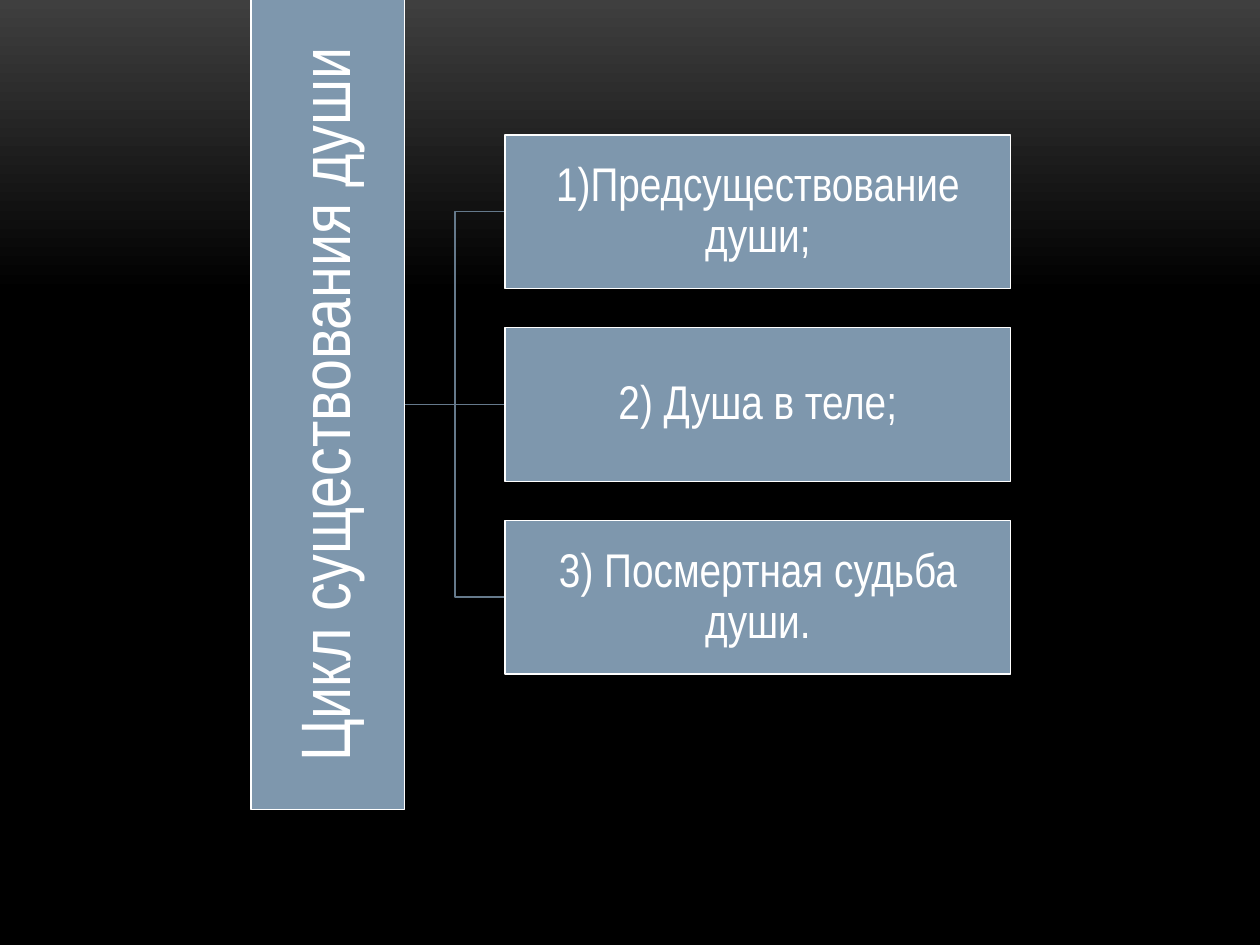
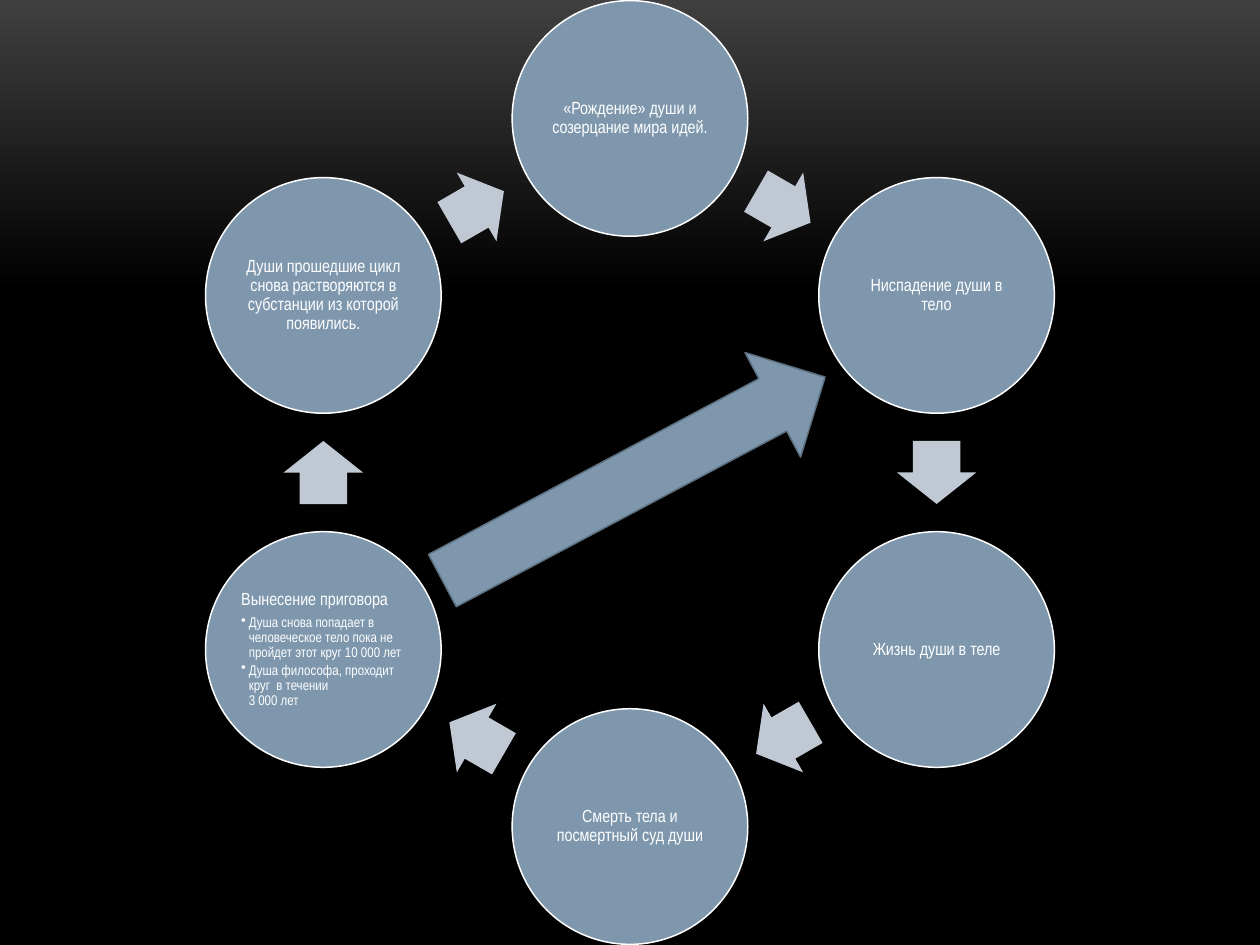
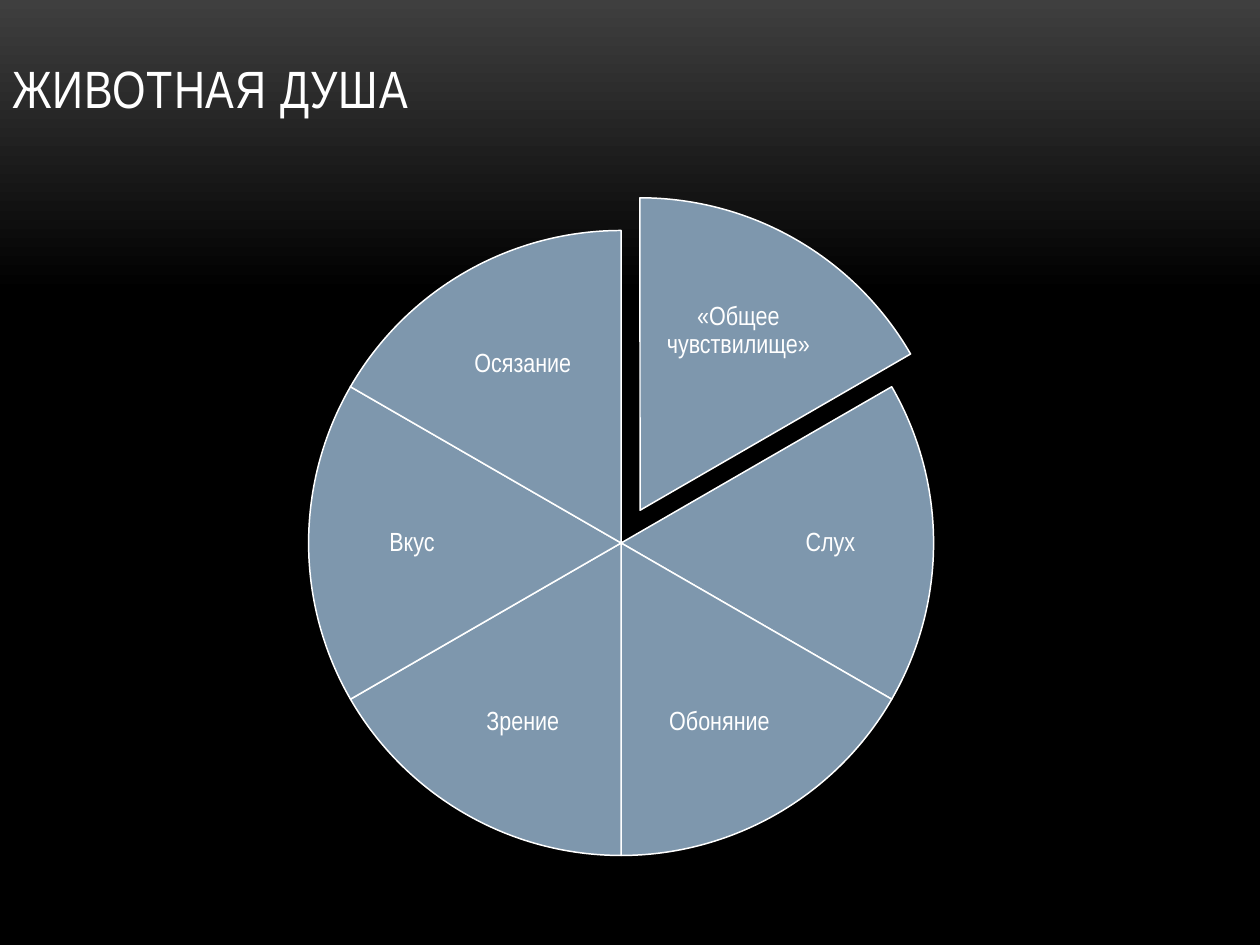
from dataclasses import dataclass
from math import cos, radians, sin

from lxml import etree
from pptx import Presentation
from pptx.dml.color import RGBColor
from pptx.enum.shapes import MSO_CONNECTOR, MSO_SHAPE
from pptx.enum.text import MSO_ANCHOR, PP_ALIGN
from pptx.oxml.ns import qn
from pptx.util import Inches, Pt

LEFT, CENTER = PP_ALIGN.LEFT, PP_ALIGN.CENTER
MIDDLE, BOTTOM = MSO_ANCHOR.MIDDLE, MSO_ANCHOR.BOTTOM
RECTANGLE, OVAL = MSO_SHAPE.RECTANGLE, MSO_SHAPE.OVAL
ARROW, PIE = MSO_SHAPE.RIGHT_ARROW, MSO_SHAPE.PIE
STRAIGHT, ELBOW = MSO_CONNECTOR.STRAIGHT, MSO_CONNECTOR.ELBOW


@dataclass(frozen=True)
class Theme:
    font: str = "Arial Narrow"
    glow: str = "3F3F3F"
    black: str = "000000"
    white: str = "FFFFFF"
    steel: str = "7E97AD"
    pale_steel: str = "C0C9D3"
    branch: str = "65798B"
    arrow_edge: str = "5D7080"
    line: float = 0.85
    root_size: int = 40
    title_size: int = 30
    branch_size: int = 27
    slice_size: int = 15
    stage_size: int = 10
    detail_size: int = 8


THEME = Theme()

STEPS = ["1)Предсуществование души;", "2) Душа в теле;", "3) Посмертная судьба души."]

# Clockwise from the top; a stage may carry bulleted details
STAGES = [
    ("«Рождение» души и созерцание мира идей.", []),
    ("Ниспадение души в тело", []),
    ("Жизнь души в теле", []),
    ("Смерть тела и посмертный суд души", []),
    ("Вынесение приговора", [
        "Душа снова попадает в человеческое тело пока не пройдет этот круг 10 000 лет",
        "Душа философа, проходит круг  в течении \n3 000 лет",
    ]),
    ("Души прошедшие цикл снова растворяются в субстанции из которой появились.", []),
]

# Clockwise from the top: sense, label offset from the tip of its slice
SENSES = [
    ("«Общее чувствилище»", 0.78, -1.42),
    ("Слух", 1.66, 0),
    ("Обоняние", 0.78, 1.42),
    ("Зрение", -0.78, 1.42),
    ("Вкус", -1.66, 0),
    ("Осязание", -0.78, -1.42),
]


def rgb(code):
    return RGBColor.from_string(code)


def polar(x, y, radius, angle):
    """Point at a clockwise angle from the x axis."""
    return x + radius * cos(radians(angle)), y + radius * sin(radians(angle))


# Text
def add_bullet(paragraph, indent=0.06):
    properties = paragraph._p.get_or_add_pPr()
    properties.set("lvl", "1")
    properties.set("marL", str(Inches(indent)))
    properties.set("indent", str(-Inches(indent)))
    etree.SubElement(properties, qn("a:buChar"), char="•")


def write(frame, text, size, align=CENTER, anchor=MIDDLE, inset=0.02, bullet=False,
          spacing=0.9, after=0.35, tracking=0, append=False):
    """Fill the frame, or append a paragraph; space after is a share of the size."""
    frame.word_wrap = True
    frame.vertical_anchor = anchor
    frame.margin_left = frame.margin_right = Inches(inset)
    frame.margin_top = frame.margin_bottom = Inches(min(inset, 0.05))
    paragraph = frame.add_paragraph() if append else frame.paragraphs[0]
    if bullet:
        add_bullet(paragraph)
    paragraph.text = text
    paragraph.alignment = align
    paragraph.line_spacing = spacing
    paragraph.space_after = Pt(size * after)
    for run in paragraph.runs:
        run.font.name = THEME.font
        run.font.size = Pt(size)
        run.font.color.rgb = rgb(THEME.white)
        if tracking:
            run.font._element.set("spc", str(round(tracking * 100)))
    for line_break in paragraph._p.findall(qn("a:br")):
        etree.SubElement(line_break, qn("a:rPr"), sz=str(size * 100))


def add_label(slide, x, y, width, height, text, size, **text_format):
    box = slide.shapes.add_textbox(Inches(x), Inches(y), Inches(width), Inches(height))
    write(box.text_frame, text, size, **text_format)


# Shapes
def add_centred(slide, kind, x, y, width, height, fill=THEME.steel, line=THEME.white,
                rotation=0, adjustments=()):
    """Preset shape placed by its centre."""
    shape = slide.shapes.add_shape(kind, Inches(x - width / 2), Inches(y - height / 2),
                                   Inches(width), Inches(height))
    shape.shadow.inherit = False
    shape.rotation = rotation
    for index, value in enumerate(adjustments):
        shape.adjustments[index] = value
    shape.fill.solid()
    shape.fill.fore_color.rgb = rgb(fill)
    if line:
        shape.line.color.rgb = rgb(line)
        shape.line.width = Pt(THEME.line)
    else:
        shape.line.fill.background()
    return shape


def add_branch(slide, x1, y1, x2, y2):
    kind = STRAIGHT if y1 == y2 else ELBOW
    branch = slide.shapes.add_connector(kind, Inches(x1), Inches(y1), Inches(x2), Inches(y2))
    branch.line.color.rgb = rgb(THEME.branch)
    branch.line.width = Pt(THEME.line)
    etree.SubElement(branch._element.spPr, qn("a:effectLst"))


def set_background(master):
    fill = master.background.fill
    fill.gradient()
    fill.gradient_angle = 270
    for stop, color, position in zip(fill.gradient_stops, (THEME.glow, THEME.black), (0, 0.31)):
        stop.color.rgb = rgb(color)
        stop.position = position


# Slides
def build_hierarchy(slide):
    root_x, middle_y, thickness = 2.6, 3.21, 1.22
    step_left, step_width, pitch = 4.01, 4.01, 1.53
    rows = [middle_y + pitch * (index - 1) for index in range(len(STEPS))]

    for y in rows:
        add_branch(slide, root_x + thickness / 2, middle_y, step_left, y)
    root = add_centred(slide, RECTANGLE, root_x, middle_y, 6.43, thickness, rotation=270)
    write(root.text_frame, "Цикл существования души", THEME.root_size, inset=0.03)
    for text, y in zip(STEPS, rows):
        step = add_centred(slide, RECTANGLE, step_left + step_width / 2, y, step_width, thickness)
        write(step.text_frame, text, THEME.branch_size)


def build_cycle(slide):
    center, ring, diameter = (5, 3.75), 2.81, 1.87
    turn = 360 / len(STAGES)

    for index, (text, details) in enumerate(STAGES):
        angle = turn * index - 90
        stage = add_centred(slide, OVAL, *polar(*center, ring, angle), diameter, diameter)
        write(stage.text_frame, text, THEME.stage_size, inset=0.01,
              align=LEFT if details else CENTER)
        for detail in details:
            write(stage.text_frame, detail, THEME.detail_size, inset=0.01, align=LEFT,
                  bullet=True, after=0.15, append=True)
        # Arrow halfway to the next stage, pointing along the ring
        halfway = angle + turn / 2
        add_centred(slide, ARROW, *polar(*center, ring * cos(radians(turn / 2)), halfway),
                    0.5, 0.63, fill=THEME.pale_steel, line=None,
                    rotation=(halfway + 90) % 360, adjustments=(0.6, 0.5))

    # Shortcut from the verdict back to the body
    add_centred(slide, ARROW, 5.03, 3.8, 3.44, 0.94, line=THEME.arrow_edge, rotation=332)


def build_senses(slide):
    center, diameter, explosion = (4.93, 4.31), 4.96, 0.3
    label_width, label_height = 1.45, 1.06
    turn = 360 / len(SENSES)
    angle_unit = 0.6  # adjustment units in one degree

    add_label(slide, 0, 0, 10, 0.99, "ЖИВОТНАЯ ДУША", THEME.title_size, align=LEFT,
              anchor=BOTTOM, inset=0.1, spacing=1.0, after=0, tracking=0.5)
    for index, (sense, dx, dy) in enumerate(SENSES):
        start = (270 + turn * index) % 360
        end = (start + turn) % 360
        x, y = polar(*center, 0 if index else explosion, start + turn / 2)
        add_centred(slide, PIE, x, y, diameter, diameter,
                    adjustments=(start * angle_unit, end * angle_unit))
        add_label(slide, x + dx - label_width / 2, y + dy - label_height / 2,
                  label_width, label_height, sense, THEME.slice_size)


def main():
    prs = Presentation()
    prs.slide_width, prs.slide_height = Inches(10), Inches(7.5)
    set_background(prs.slide_master)
    blank = prs.slide_layouts[6]
    for build in (build_hierarchy, build_cycle, build_senses):
        build(prs.slides.add_slide(blank))
    prs.save("out.pptx")


if __name__ == "__main__":
    main()
